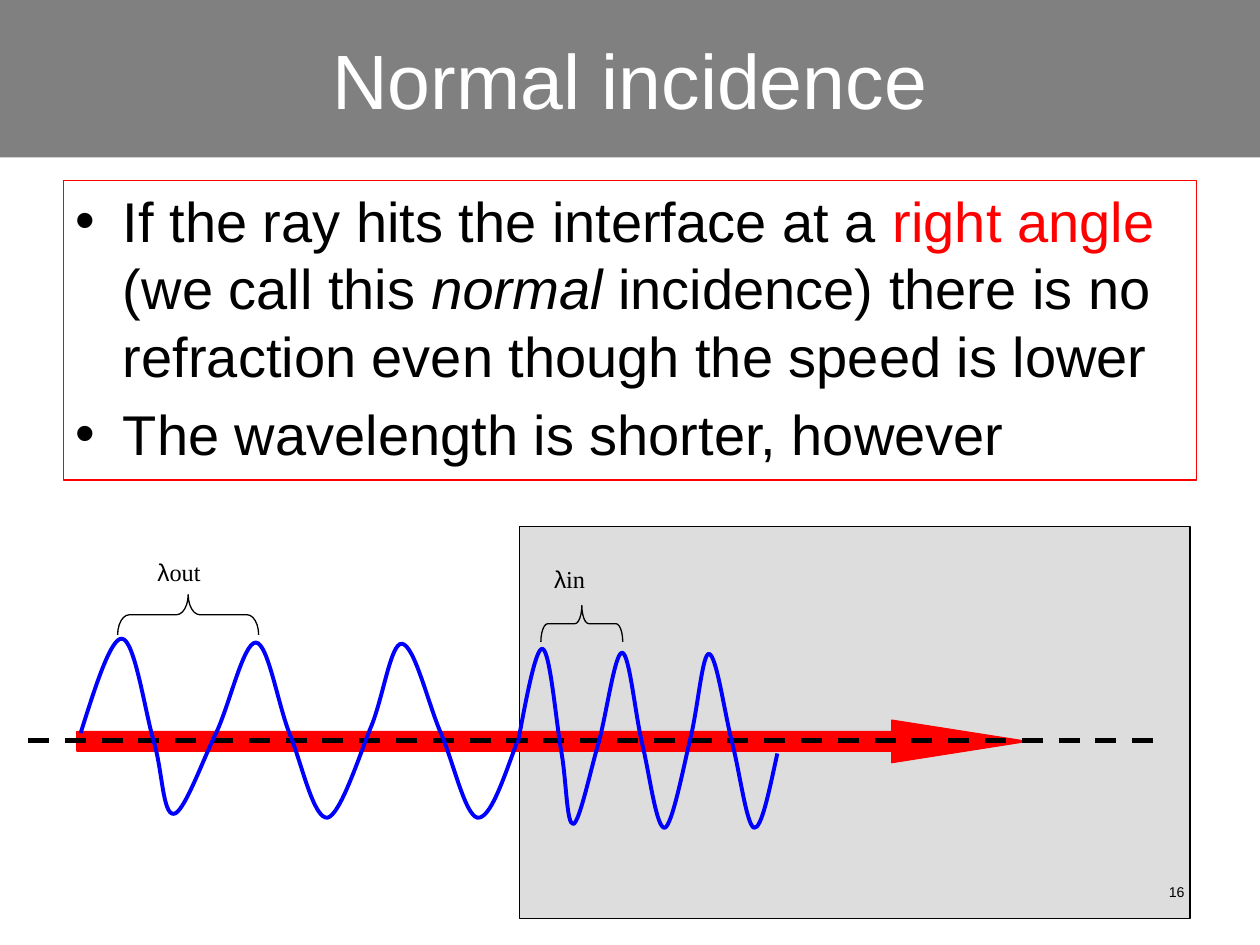
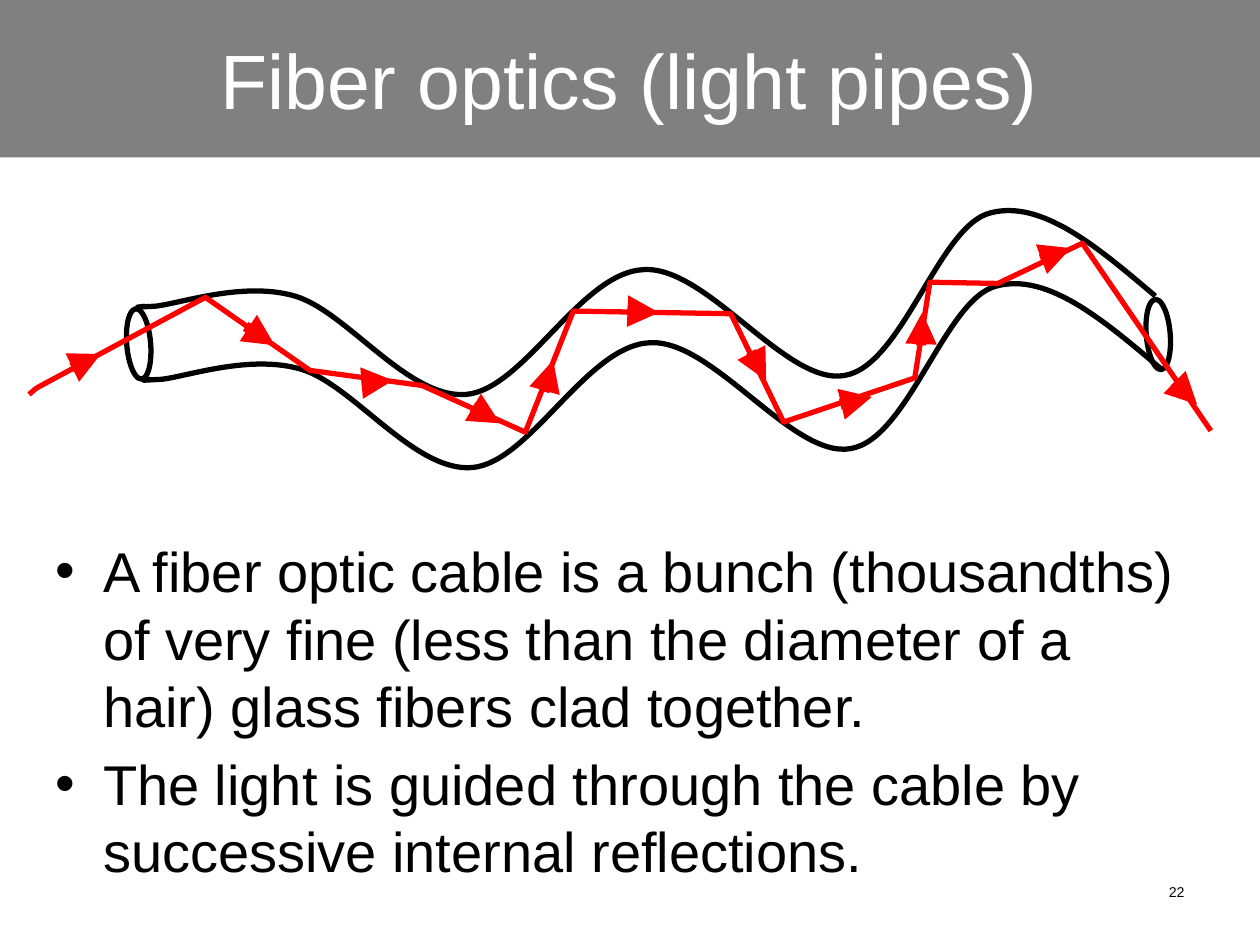
"""Build two optics slides: normal incidence and fiber optics."""
from dataclasses import dataclass
from typing import Optional

from lxml import etree
from pptx import Presentation
from pptx import util as u
from pptx.dml.color import RGBColor
from pptx.enum import dml, shapes, text
from pptx.oxml import ns

Pt = u.Pt
Point = tuple[float, float]

COLORS = {"band": "808080", "paper": "FFFFFF", "ink": "000000", "ray": "FF0000",
          "wave": "0000FF", "glass": "DDDDDD"}
SANS, SERIF = "Arial", "Times New Roman"


@dataclass(frozen=True)
class Box:
    left: float
    top: float
    width: float
    height: float

    def lengths(self) -> list[int]:
        return [Pt(v) for v in (self.left, self.top, self.width, self.height)]


@dataclass(frozen=True)
class Span:
    words: str
    color: str = "ink"
    italic: bool = False
    font: str = SANS
    subscript: bool = False


@dataclass(frozen=True)
class Preset:
    kind: shapes.MSO_SHAPE
    box: Box
    fill: Optional[str] = None
    line: Optional[str] = "ink"
    weight: float = 0.75
    rotation: float = 0
    adjust: tuple[float, ...] = ()


@dataclass(frozen=True)
class Stroke:
    start: Point
    end: Point
    color: str
    weight: float
    dashed: bool = False
    arrow: bool = False


KIND = shapes.MSO_SHAPE
TITLE_BAND = Preset(KIND.RECTANGLE, Box(0, 0, 720, 90), "band", None)
NUMBER_BOX = Box(516, 492, 168, 37.4)

INCIDENCE_TEXT = [
    [Span("If the ray hits the interface at a "), Span("right angle", "ray"),
     Span(" (we call this "), Span("normal", italic=True),
     Span(" incidence) there is no refraction even though the speed is lower")],
    [Span("The wavelength is shorter, however")],
]
FIBER_TEXT = [
    [Span("A fiber optic cable is a bunch (thousandths) of very fine (less than the "
          "diameter of a hair) glass fibers clad together.")],
    [Span("The light is guided through the cable by successive internal reflections.")],
]

GLASS_BLOCK = Preset(KIND.RECTANGLE, Box(296.8, 301, 383.2, 224), "glass")
BEAM = Preset(KIND.RIGHT_ARROW, Box(43.9, 411.5, 543, 24.3), "ray", "ray",
              adjust=(0.46, 3.18))
AXIS = Stroke((16, 423), (664, 423), "ink", 3, dashed=True)
BRACES = [
    Preset(KIND.LEFT_BRACE, Box(96, 311, 23, 80.6), rotation=90, adjust=(0.29, 0.5)),
    Preset(KIND.LEFT_BRACE, Box(322, 333, 20.9, 46.8), rotation=90, adjust=(0.19, 0.5)),
]
WAVELENGTHS = [("out", Box(82.8, 298.8, 49.7, 36)), ("in", Box(309.5, 302.8, 49.7, 36))]

OUTER_WAVE = [
    (46.1, 419),
    (54.7, 391.7), (63.4, 364.3), (69.8, 365),
    (77, 365.8), (82.8, 406.1), (87.8, 423.4),
    (92.9, 439.9), (92.9, 465.8), (99.4, 465.1),
    (105.1, 464.4), (115.2, 436.3), (123.1, 419.8),
    (131, 403.9), (139, 367.2), (146.2, 367.2),
    (153.4, 367.2), (159.1, 404.6), (166.3, 421.2),
    (172.8, 437.8), (179.3, 468), (187.2, 467.3),
    (194.4, 465.8), (205.2, 432.7), (211.7, 416.2),
    (218.9, 399.6), (223.2, 367.2), (229.7, 367.9),
    (236.9, 368.6), (244.8, 402.5), (252, 419),
    (259.2, 435.6), (265.7, 465.8), (272.9, 467.3),
    (280.1, 468), (287.3, 446.4), (295.2, 424.8),
]
OUTER_LEFT, OUTER_WIDTH = 46.1, 249.1
GLASS_LEFT, GLASS_WIDTH, GLASS_DROP = 295.9, 148.3, 5.8
GLASS_WAVE = [(GLASS_LEFT + (x - OUTER_LEFT) * GLASS_WIDTH / OUTER_WIDTH, y + GLASS_DROP)
              for x, y in OUTER_WAVE]

UPPER_WALL = [
    (82.8, 175),
    (78.5, 175.7), (74.2, 175.7), (88.6, 175),
    (103, 173.5), (139, 160.6), (168.5, 169.2),
    (198, 177.8), (233.3, 228.2), (266.4, 225.4),
    (299.5, 222.5), (331.9, 155.5), (367.9, 154.1),
    (403.9, 151.9), (449.3, 220.3), (482.4, 214.6),
    (515.5, 209.5), (536.4, 128.9), (565.9, 121.7),
    (595.4, 113.8), (627.8, 141.8), (660.2, 169.2),
]
LOWER_WALL = [(x + 3.5, y + 41.8) for x, y in UPPER_WALL]
FIBER_ENDS = [
    Preset(KIND.OVAL, Box(left, top, 13.7, 40.3), weight=3, rotation=355.3)
    for left, top in ((72.4, 176.4), (655, 171))
]
RAY_ENTRY = [(16.6, 225.4), (20.9, 221.8), (18.7, 223.2), (22.3, 221)]
RAY_BOUNCES = [
    (117.4, 169.9), (177.1, 211.7), (241.2, 220.3), (300.2, 247), (327.6, 177.8),
    (417.6, 179.3), (447.8, 241.2), (522.7, 216), (531.4, 161.3), (570.2, 162),
    (618.5, 139), (691.9, 246.2),
]
RAY_ARROWS = [
    ((41, 210.2), (57.6, 202.3)), ((140.4, 186.5), (157, 197.3)),
    ((206.6, 218.9), (224.6, 217.4)), ((270, 232.6), (285.8, 241.9)),
    ((311, 223.9), (316.1, 205.9)), ((358.6, 177.8), (376.6, 178.6)),
    ((429.1, 200.9), (437.8, 217.4)), ((480.2, 231.1), (498.2, 226.8)),
    ((526.3, 197.3), (527, 178.6)), ((594.7, 148.3), (612, 141.8)),
    ((671, 218.2), (684, 231.1)),
]


def rgb(color: str) -> RGBColor:
    return RGBColor.from_string(COLORS[color])


def style_shape(shape, fill: Optional[str], line: Optional[str], weight: float) -> None:
    shape.shadow.inherit = False
    if fill:
        shape.fill.solid()
        shape.fill.fore_color.rgb = rgb(fill)
    else:
        shape.fill.background()
    if line:
        shape.line.color.rgb = rgb(line)
        shape.line.width = Pt(weight)
    else:
        shape.line.fill.background()


def draw_preset(slide, preset: Preset):
    shape = slide.shapes.add_shape(preset.kind, *preset.box.lengths())
    style_shape(shape, preset.fill, preset.line, preset.weight)
    shape.rotation = preset.rotation
    for index, value in enumerate(preset.adjust):
        shape.adjustments[index] = value
    return shape


def bend_segments(outline, count: int) -> None:
    segments = list(outline._element.iter(ns.qn("a:lnTo")))[:count]
    for first in range(0, count, 3):
        cubic = etree.Element(ns.qn("a:cubicBezTo"))
        segments[first].addprevious(cubic)
        for segment in segments[first:first + 3]:
            cubic.append(segment[0])
            segment.getparent().remove(segment)


def draw_curve(slide, curve: list[Point], color: str, weight: float,
               corners: Optional[list[Point]] = None) -> None:
    points = [(Pt(x), Pt(y)) for x, y in curve + (corners or [])]
    builder = slide.shapes.build_freeform(*points[0])
    builder.add_line_segments(points[1:], close=False)
    outline = builder.convert_to_shape()
    bend_segments(outline, len(curve) - 1)
    style_shape(outline, None, color, weight)


def draw_stroke(slide, stroke: Stroke) -> None:
    ends = [Pt(v) for v in stroke.start + stroke.end]
    connector = slide.shapes.add_connector(shapes.MSO_CONNECTOR.STRAIGHT, *ends)
    connector.line.color.rgb = rgb(stroke.color)
    connector.line.width = Pt(stroke.weight)
    if stroke.dashed:
        connector.line.dash_style = dml.MSO_LINE.DASH
    properties = connector._element.spPr
    if stroke.arrow:
        etree.SubElement(properties.find(ns.qn("a:ln")), ns.qn("a:tailEnd"), type="triangle")
    etree.SubElement(properties, ns.qn("a:effectLst"))


def write_spans(paragraph, spans: list[Span], size: float) -> None:
    for span in spans:
        run = paragraph.add_run()
        run.text = span.words
        run.font.size = Pt(size)
        run.font.name = span.font
        run.font.italic = span.italic
        run.font.color.rgb = rgb(span.color)
        if span.subscript:
            run._r.get_or_add_rPr().set("baseline", "-25000")


def draw_label(slide, box: Box, spans: list[Span], size: float, align=text.PP_ALIGN.LEFT) -> None:
    frame = slide.shapes.add_textbox(*box.lengths()).text_frame
    frame.word_wrap = True
    frame.paragraphs[0].alignment = align
    write_spans(frame.paragraphs[0], spans, size)


def draw_bullets(slide, box: Box, points: list[list[Span]], border: Optional[str] = None) -> None:
    body = slide.shapes.add_textbox(*box.lengths())
    if border:
        body.line.color.rgb = rgb(border)
        body.line.width = Pt(0.75)
    frame = body.text_frame
    frame.word_wrap = True
    for index, spans in enumerate(points):
        paragraph = frame.add_paragraph() if index else frame.paragraphs[0]
        paragraph.space_before = Pt(6.4 if index else 0)
        properties = paragraph._p.get_or_add_pPr()
        properties.set("marL", str(Pt(27)))
        properties.set("indent", str(Pt(-27)))
        etree.SubElement(properties, ns.qn("a:buFont"), typeface=SANS)
        etree.SubElement(properties, ns.qn("a:buChar"), char="•")
        write_spans(paragraph, spans, 32)


def add_titled_slide(deck, title: str):
    slide = deck.slides.add_slide(deck.slide_layouts[6])
    frame = draw_preset(slide, TITLE_BAND).text_frame
    frame.word_wrap = True
    frame.vertical_anchor = text.MSO_ANCHOR.MIDDLE
    frame.paragraphs[0].alignment = text.PP_ALIGN.CENTER
    write_spans(frame.paragraphs[0], [Span(title, "paper")], 44)
    return slide


def draw_number(slide, number: int) -> None:
    draw_label(slide, NUMBER_BOX, [Span(str(number), subscript=True)], 14, text.PP_ALIGN.RIGHT)


def build_incidence(deck) -> None:
    slide = add_titled_slide(deck, "Normal incidence")
    draw_bullets(slide, Box(36.2, 103.2, 647.6, 171.2), INCIDENCE_TEXT, "ray")
    draw_preset(slide, GLASS_BLOCK)
    draw_preset(slide, BEAM)
    draw_stroke(slide, AXIS)
    for wave in (OUTER_WAVE, GLASS_WAVE):
        draw_curve(slide, wave, "wave", 2.25)
    for brace in BRACES:
        draw_preset(slide, brace)
    for place, box in WAVELENGTHS:
        draw_label(slide, box, [Span("λ", subscript=True),
                                Span(place, font=SERIF, subscript=True)], 24)
    draw_number(slide, 16)


def build_fiber(deck) -> None:
    slide = add_titled_slide(deck, "Fiber optics (light pipes)")
    draw_bullets(slide, Box(24.8, 303.2, 666.7, 217.4), FIBER_TEXT)
    for wall in (UPPER_WALL, LOWER_WALL):
        draw_curve(slide, wall, "ink", 3)
    for fiber_end in FIBER_ENDS:
        draw_preset(slide, fiber_end)
    draw_curve(slide, RAY_ENTRY, "ray", 3, RAY_BOUNCES)
    for start, end in RAY_ARROWS:
        draw_stroke(slide, Stroke(start, end, "ray", 6, arrow=True))
    draw_number(slide, 22)


def main() -> None:
    deck = Presentation()
    deck.slide_width, deck.slide_height = Pt(720), Pt(540)
    build_incidence(deck)
    build_fiber(deck)
    deck.save("out.pptx")


if __name__ == "__main__":
    main()
